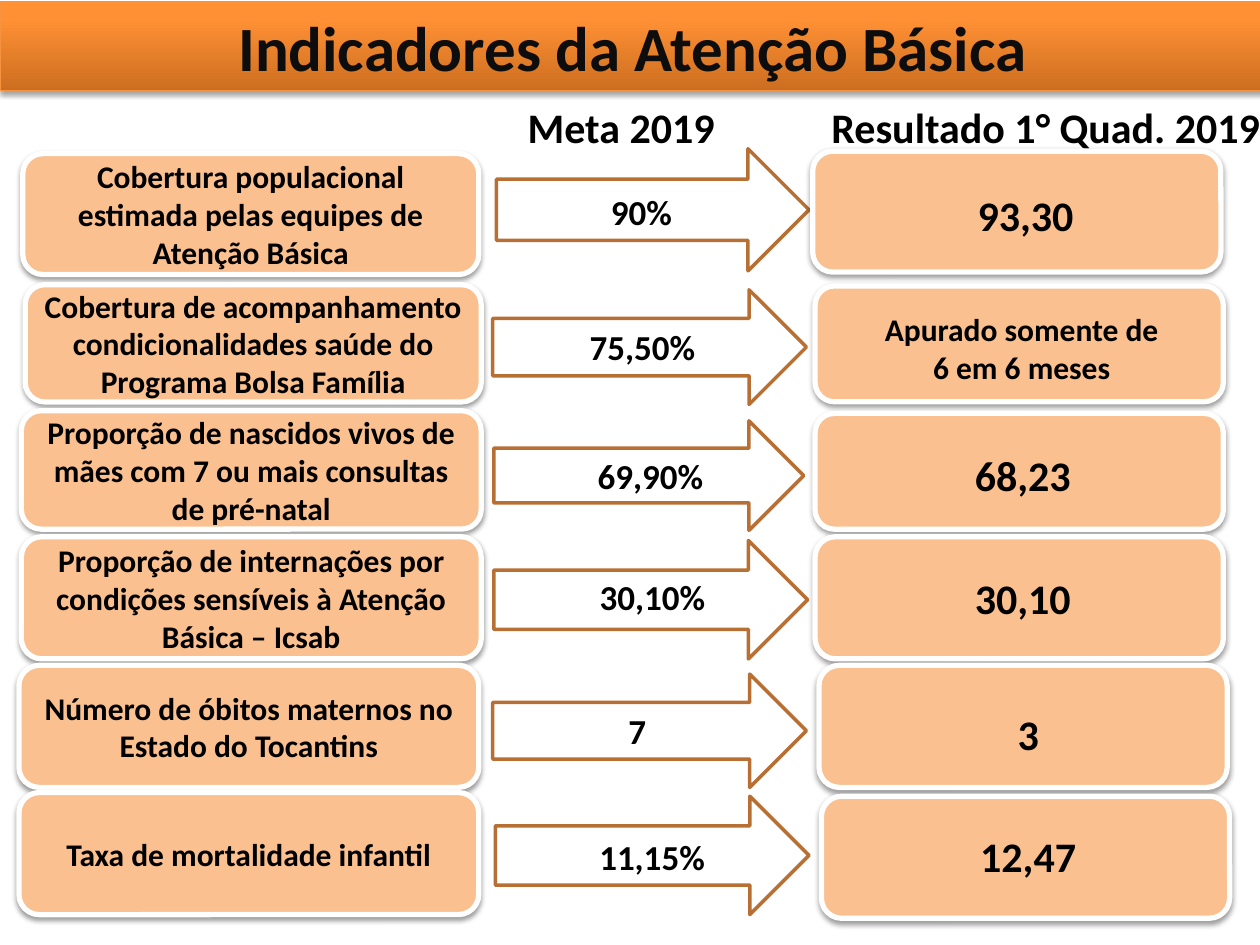
from typing import NamedTuple

from lxml.etree import SubElement
from pptx import Presentation
from pptx.dml.color import RGBColor
from pptx.enum.shapes import MSO_SHAPE as Shape
from pptx.enum.text import MSO_ANCHOR as Anchor, MSO_AUTO_SIZE as AutoSize, PP_ALIGN as Align
from pptx.oxml.ns import qn
from pptx.util import Pt

COLORS = {
    "text": "000000",
    "title": "0D0D0D",
    "white": "FFFFFF",
    "card": "FAC090",
    "arrow": "B76F34",
    "band_dark": "CC6E20",
    "band_light": "FF9034",
    "band_line": "F69240",
    "shadow": "000000",
}
FONT = "Calibri"
LABEL_SIZE, GOAL_SIZE, RESULT_SIZE, TITLE_SIZE = 18, 20, 24, 36
CARD_WIDTH = 233.3


class Box(NamedTuple):
    left: float
    top: float
    width: float
    height: float

    def lengths(self):
        return [Pt(value) for value in self]

    def centered(self, width, height, shift):
        """Box of the given size on the centre of this one, moved by shift."""
        return Box(self.left + (self.width - width) / 2 + shift[0],
                   self.top + (self.height - height) / 2 + shift[1], width, height)


class Indicator(NamedTuple):
    label: str
    goal: str
    result: str
    label_box: Box
    arrow_box: Box
    card_box: Box
    goal_shift: tuple
    result_shift: tuple
    result_size: int = RESULT_SIZE


INDICATORS = [
    Indicator("Cobertura populacional estimada pelas equipes de Atenção Básica",
              "90%", "93,30",
              Box(13, 87.8, 260.6, 69.1), Box(283.7, 85, 178.6, 69.8),
              Box(464.4, 86.4, CARD_WIDTH, 69.1), (-6.5, 1), (5, 2)),
    Indicator("Cobertura de acompanhamento condicionalidades saúde do Programa Bolsa Família",
              "75,50%", "Apurado somente de 6 em 6 meses",
              Box(14.4, 162.7, 260.6, 67), Box(281.5, 165.6, 179.3, 65.5),
              Box(465.8, 163.4, CARD_WIDTH, 66.2), (-4, 0), (1.4, 2.5), LABEL_SIZE),
    Indicator("Proporção de nascidos vivos de mães com 7 ou mais consultas de pré-natal",
              "69,90%", "68,23",
              Box(12.2, 234.7, 262.8, 67.7), Box(282.2, 240.5, 177.1, 62.6),
              Box(465.8, 236.2, CARD_WIDTH, 66.2), (1, 0.5), (2, 2)),
    Indicator("Proporção de internações por condições sensíveis à Atenção Básica – Icsab",
              "30,10%", "30,10",
              Box(12.2, 306.7, 262.8, 69.8), Box(282.2, 308.9, 179.3, 67.7),
              Box(465.8, 306.7, CARD_WIDTH, 69.8), (1, -1.5), (2, 0)),
    Indicator("Número de óbitos maternos no Estado do Tocantins",
              "7", "3",
              Box(10.8, 380.2, 262.8, 69.8), Box(281.5, 385.2, 179.3, 64.8),
              Box(468, 380.2, CARD_WIDTH, 69.8), (-7, 0), (3, 4)),
    Indicator("Taxa de mortalidade infantil",
              "11,15%", "12,47",
              Box(10.8, 452.9, 262.8, 69.8), Box(283, 455, 179.3, 67.7),
              Box(469.4, 455, CARD_WIDTH, 69.8), (0, 1), (1.5, -1)),
]


def color(name):
    return RGBColor.from_string(COLORS[name])


def write(shape, text, size, anchor=Anchor.MIDDLE, wrap=True, ink="text"):
    frame = shape.text_frame
    frame.word_wrap = wrap
    frame.auto_size = AutoSize.NONE
    frame.vertical_anchor = anchor
    para = frame.paragraphs[0]
    para.alignment = Align.CENTER
    span = para.add_run()
    span.text = text
    span.font.name = FONT
    span.font.size = Pt(size)
    span.font.bold = True
    span.font.color.rgb = color(ink)


def add_shadow(shape, opacity, distance):
    shape.shadow.inherit = False
    effects = shape._element.spPr.find(qn("a:effectLst"))
    outer = SubElement(effects, qn("a:outerShdw"), blurRad=str(Pt(3.1)),
                       dist=str(Pt(distance)), dir="5400000", rotWithShape="0")
    tint = SubElement(outer, qn("a:srgbClr"), val=COLORS["shadow"])
    SubElement(tint, qn("a:alpha"), val=str(opacity * 1000))


def add_panel(page, kind, box, fill, line, width):
    panel = page.shapes.add_shape(kind, *box.lengths())
    panel.shadow.inherit = False
    panel.fill.solid()
    panel.fill.fore_color.rgb = color(fill)
    panel.line.color.rgb = color(line)
    panel.line.width = Pt(width)
    return panel


def add_card(page, box):
    card = add_panel(page, Shape.ROUNDED_RECTANGLE, box, "card", "white", 3)
    add_shadow(card, 38, 1.6)
    return card


def add_caption(page, box, text, size, wrap=True):
    write(page.shapes.add_textbox(*box.lengths()), text, size, Anchor.TOP, wrap)


def add_title(page, box, text):
    title = page.shapes.title
    title.left, title.top, title.width, title.height = box.lengths()
    title.fill.gradient()
    title.fill.gradient_angle = 90
    dark, light = title.fill.gradient_stops
    dark.color.rgb, dark.position = color("band_dark"), 0
    light.color.rgb, light.position = color("band_light"), 0.8
    title.line.color.rgb = color("band_line")
    title.line.width = Pt(0.75)
    add_shadow(title, 35, 1.8)
    write(title, text, TITLE_SIZE, ink="title")


def add_indicator(page, item):
    # Name of the indicator
    write(add_card(page, item.label_box), item.label, LABEL_SIZE)
    # Goal on its arrow
    add_panel(page, Shape.RIGHT_ARROW, item.arrow_box, "white", "arrow", 2)
    add_caption(page, item.arrow_box.centered(178, 31.7, item.goal_shift),
                item.goal, GOAL_SIZE)
    # Result on its card
    add_card(page, item.card_box)
    height = 36 if item.result_size == RESULT_SIZE else 51
    add_caption(page, item.card_box.centered(174.2, height, item.result_shift),
                item.result, item.result_size)


def main():
    deck = Presentation()
    deck.slide_width, deck.slide_height = Pt(720), Pt(540)
    page = deck.slides.add_slide(deck.slide_layouts[5])

    add_title(page, Box(0, 0.7, 723, 51), "Indicadores da Atenção Básica")
    for item in INDICATORS:
        add_indicator(page, item)

    # Column headings
    add_caption(page, Box(294.5, 54.7, 121, 36), "Meta 2019", RESULT_SIZE, wrap=False)
    add_caption(page, Box(466.6, 54.7, 262, 36), "Resultado 1° Quad. 2019", RESULT_SIZE, wrap=False)

    deck.save("out.pptx")


if __name__ == "__main__":
    main()
